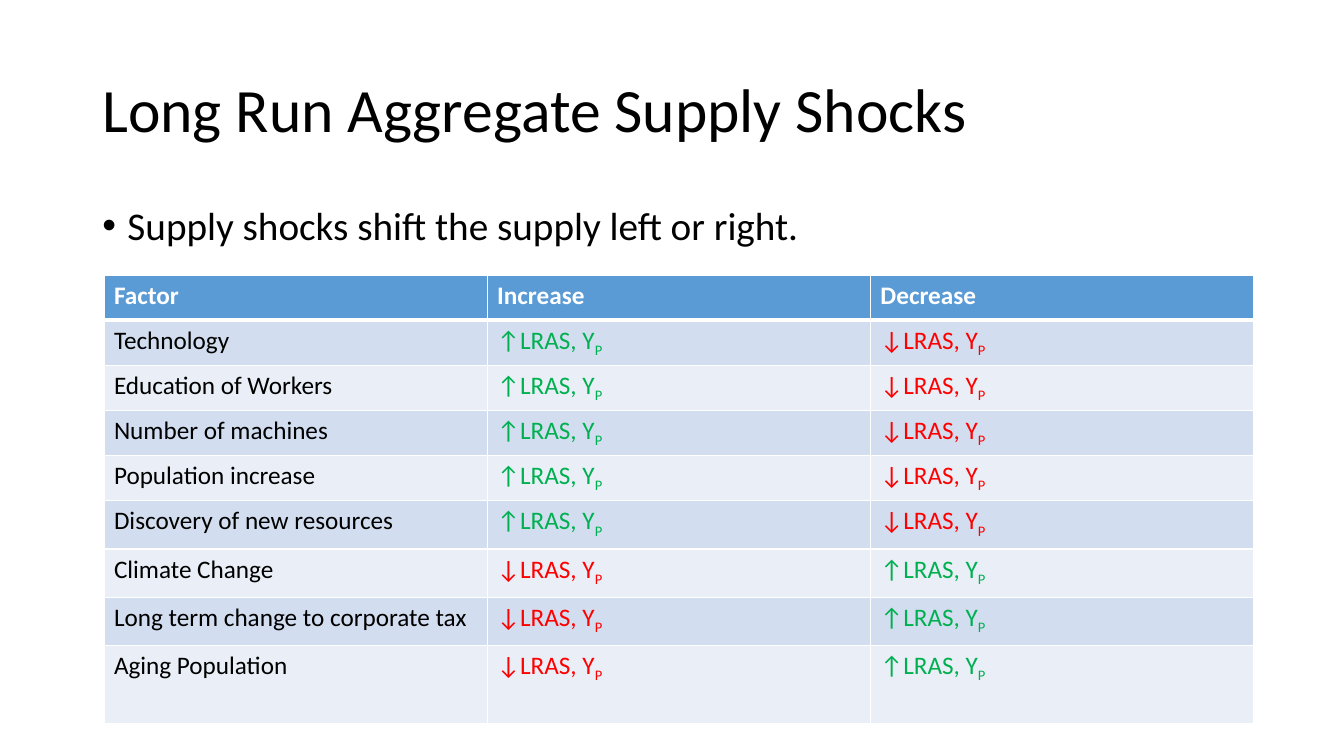
from lxml.etree import SubElement
from pptx import Presentation
from pptx.dml.color import RGBColor
from pptx.enum.text import MSO_ANCHOR
from pptx.oxml.ns import qn
from pptx.util import Pt

EMU_PER_PX = 9525
BLACK = RGBColor(0x00, 0x00, 0x00)
WHITE = RGBColor(0xFF, 0xFF, 0xFF)
HEADER_BLUE = RGBColor(0x5B, 0x9B, 0xD5)
BANDS = (RGBColor(0xD2, 0xDE, 0xEF), RGBColor(0xEA, 0xEF, 0xF7))
GREEN = RGBColor(0x00, 0xB0, 0x50)
RED = RGBColor(0xFF, 0x00, 0x00)

TITLE_BOX = (88, 38, 1104, 139)
BODY_BOX = (88, 192, 1104, 457)
TABLE_BOX = (99, 262, 1095, 427)
ROW_HEIGHTS = [43] * 5 + [46] * 3 + [74]
HEADINGS = ("Factor", "Increase", "Decrease")
UP = ("↑", GREEN)
DOWN = ("↓", RED)
FACTORS = [
    ("Technology", UP, DOWN),
    ("Education of Workers", UP, DOWN),
    ("Number of machines", UP, DOWN),
    ("Population increase", UP, DOWN),
    ("Discovery of new resources", UP, DOWN),
    ("Climate Change", DOWN, UP),
    ("Long term change to corporate tax", DOWN, UP),
    ("Aging Population", DOWN, UP),
]


def px(length):
    return round(length * EMU_PER_PX)


def add_run(paragraph, text, size, color, bold=False):
    run = paragraph.add_run()
    run.text = text
    values = {"name": "Calibri", "size": Pt(size), "bold": bold}
    for name, value in values.items():
        setattr(run.font, name, value)
    run.font.color.rgb = color
    return run


def add_text(slide, box, text, size, anchor):
    """Add a wrapped one-paragraph text box and return its paragraph."""
    frame = slide.shapes.add_textbox(*map(px, box)).text_frame
    for name, value in {"word_wrap": True, "vertical_anchor": anchor}.items():
        setattr(frame, name, value)
    paragraph = frame.paragraphs[0]
    paragraph.line_spacing = 0.9
    add_run(paragraph, text, size, BLACK)
    return paragraph


def add_bullet(paragraph, indent):
    properties = paragraph._p.get_or_add_pPr()
    properties.set("marL", str(px(indent)))
    properties.set("indent", str(-px(indent)))
    SubElement(properties, qn("a:buFont"), typeface="Arial")
    SubElement(properties, qn("a:buChar"), char="•")


def style_cell(cell, color, top=1, bottom=1):
    """Draw white borders, with top and bottom widths in points, and fill."""
    properties = cell._tc.get_or_add_tcPr()
    for side, width in {"L": 1, "R": 1, "T": top, "B": bottom}.items():
        line = SubElement(properties, qn(f"a:ln{side}"), w=str(Pt(width)))
        fill = SubElement(line, qn("a:solidFill"))
        SubElement(fill, qn("a:srgbClr"), val=str(WHITE))
    cell.fill.solid()
    cell.fill.fore_color.rgb = color


def add_effect(paragraph, effect):
    arrow, color = effect
    add_run(paragraph, f"{arrow}LRAS, Y", 18, color)
    subscript = add_run(paragraph, "P", 18, color)
    subscript._r.get_or_add_rPr().set("baseline", "-25000")


def add_factor_table(slide, box):
    table = slide.shapes.add_table(
        len(ROW_HEIGHTS), len(HEADINGS), *map(px, box)).table
    for column in table.columns:
        column.width = px(box[2] / len(HEADINGS))
    for row, height in zip(table.rows, ROW_HEIGHTS):
        row.height = px(height)

    for cell, heading in zip(table.rows[0].cells, HEADINGS):
        style_cell(cell, HEADER_BLUE, bottom=3)
        add_run(cell.text_frame.paragraphs[0], heading, 18, WHITE, bold=True)

    for index, (factor, *effects) in enumerate(FACTORS):
        cells = list(table.rows[index + 1].cells)
        for cell in cells:
            style_cell(cell, BANDS[index % 2], top=3 if index == 0 else 1)
        add_run(cells[0].text_frame.paragraphs[0], factor, 18, BLACK)
        for cell, effect in zip(cells[1:], effects):
            add_effect(cell.text_frame.paragraphs[0], effect)


def build_supply_shocks_slide(presentation):
    slide = presentation.slides.add_slide(presentation.slide_layouts[6])
    add_text(slide, TITLE_BOX, "Long Run Aggregate Supply Shocks", 44,
             MSO_ANCHOR.MIDDLE)
    statement = add_text(slide, BODY_BOX,
                         "Supply shocks shift the supply left or right.", 28,
                         MSO_ANCHOR.TOP)
    add_bullet(statement, 24)
    add_factor_table(slide, TABLE_BOX)


def main():
    presentation = Presentation()
    presentation.slide_width = px(1280)
    presentation.slide_height = px(720)
    build_supply_shocks_slide(presentation)
    presentation.save("out.pptx")


if __name__ == "__main__":
    main()
